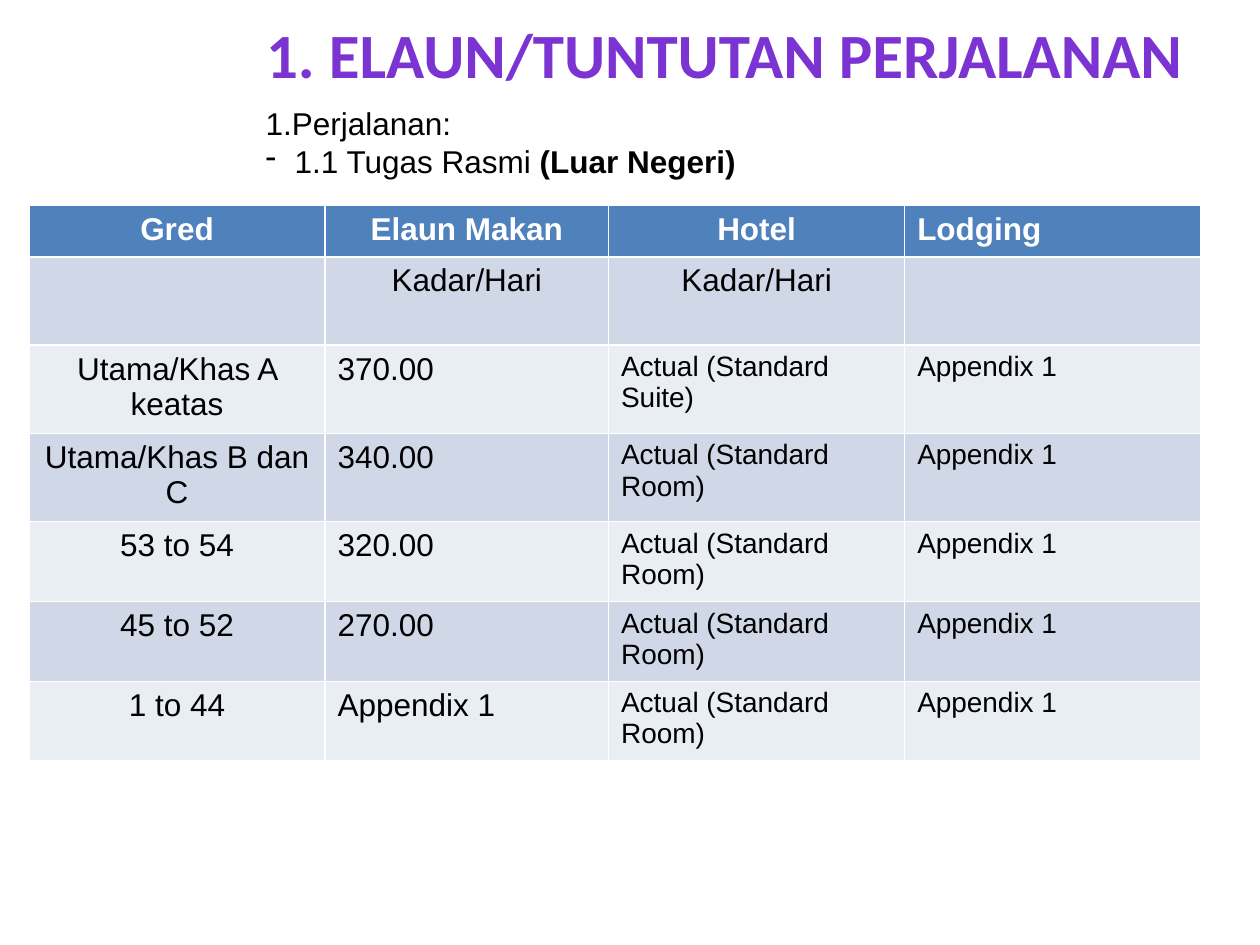
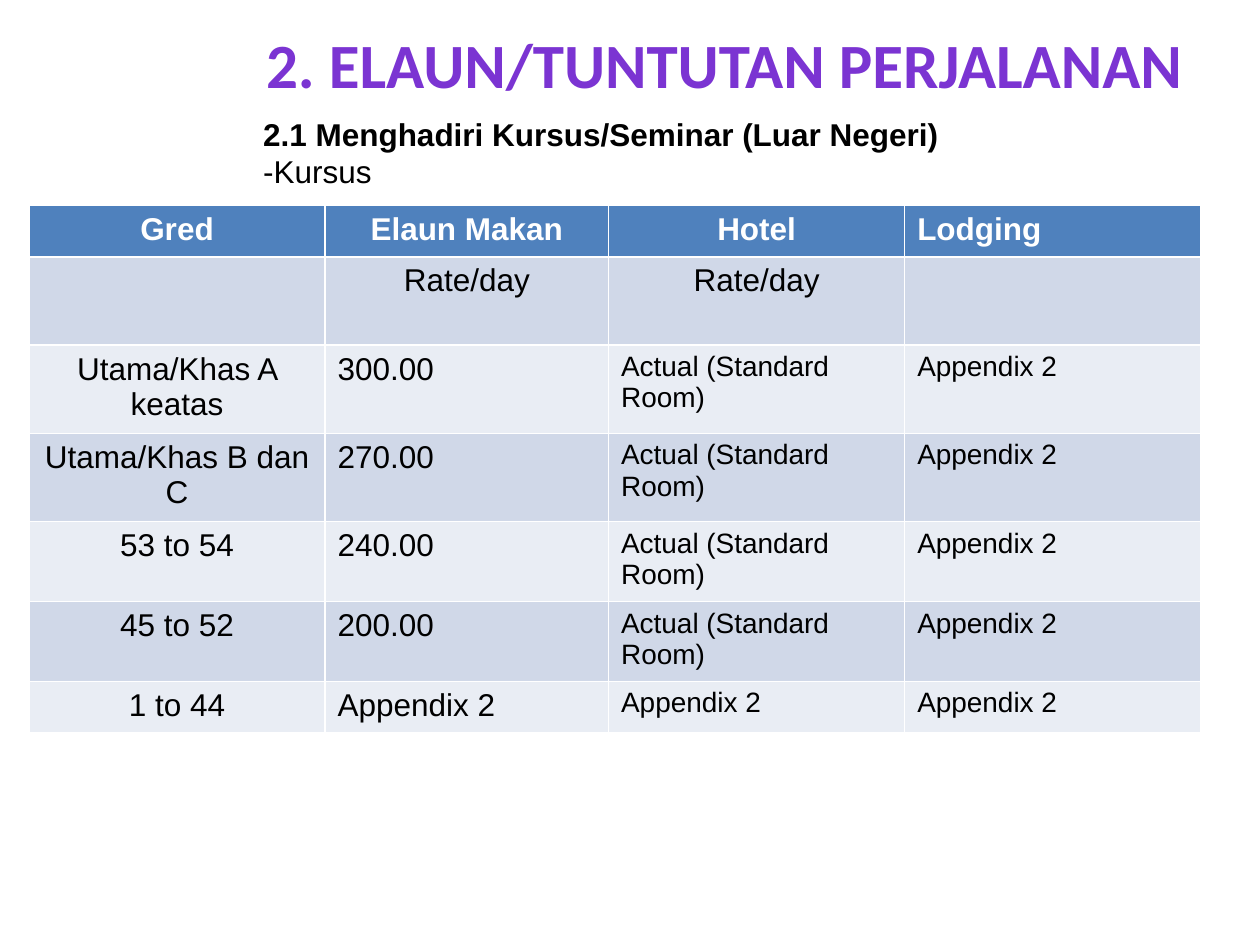
from lxml.etree import SubElement
from pptx import Presentation
from pptx.dml.color import RGBColor
from pptx.enum.text import MSO_ANCHOR, MSO_AUTO_SIZE, PP_ALIGN
from pptx.oxml.ns import qn
from pptx.util import Inches, Pt

PURPLE = RGBColor(0x7B, 0x34, 0xD2)
BLACK = RGBColor(0x00, 0x00, 0x00)
WHITE = RGBColor(0xFF, 0xFF, 0xFF)
HEADER_BLUE = RGBColor(0x4F, 0x81, 0xBD)
BANDS = [RGBColor(0xE9, 0xED, 0xF4), RGBColor(0xD0, 0xD8, 0xE8)]

TITLE_FONT, BODY_FONT = "Calibri", "Arial"
BULLET_INDENT = Inches(0.23)

# Table layout, the same on both slides
TABLE_LEFT, TABLE_TOP = 0.23, 1.63
COLUMN_WIDTHS = [2.35, 2.25, 2.35, 2.35]
ROW_HEIGHTS = [0.41, 0.7, 0.7] + [0.41] * 4
HEADERS = ["Gred", "Elaun Makan", "Hotel", "Lodging"]
GRADES = ["Utama/Khas A keatas", "Utama/Khas B dan C", "53 to 54", "45 to 52", "1 to 44"]
SUITE, ROOM = "Actual (Standard Suite)", "Actual (Standard Room)"

# Each heading line is (bulleted, [(text, bold), ...])
SLIDES = [
    {
        "title": "1. ELAUN/TUNTUTAN PERJALANAN",
        "title_box": (1.97, 0.07, 7.56, 0.71),
        "heading": [
            (False, [("1.Perjalanan:", False)]),
            (True, [("1.1 Tugas Rasmi ", False), ("(Luar Negeri)", True)]),
        ],
        "heading_box": (2.01, 0.78, 6.48, 0.71),
        "unit": "Kadar/Hari",
        "meals": ["370.00", "340.00", "320.00", "270.00", "Appendix 1"],
        "hotels": [SUITE] + [ROOM] * 4,
        "lodging": "Appendix 1",
    },
    {
        "title": "2. ELAUN/TUNTUTAN PERJALANAN",
        "title_box": (1.97, 0.15, 7.56, 0.71),
        "heading": [
            (False, [("2.1 Menghadiri Kursus/Seminar (Luar Negeri)", True)]),
            (False, [("-Kursus", False)]),
        ],
        "heading_box": (1.99, 0.86, 7.36, 0.71),
        "unit": "Rate/day",
        "meals": ["300.00", "270.00", "240.00", "200.00", "Appendix 2"],
        "hotels": [ROOM] * 4 + ["Appendix 2"],
        "lodging": "Appendix 2",
    },
]


def set_font(font, name, size, color):
    font.name, font.size = name, Pt(size)
    font.color.rgb = color


def add_text_frame(slide, box):
    text_frame = slide.shapes.add_textbox(*map(Inches, box)).text_frame
    text_frame.word_wrap = True
    text_frame.auto_size = MSO_AUTO_SIZE.SHAPE_TO_FIT_TEXT
    return text_frame


def add_dash_bullet(paragraph):
    properties = paragraph._p.get_or_add_pPr()
    properties.set("marL", str(BULLET_INDENT))
    properties.set("indent", str(-BULLET_INDENT))
    SubElement(properties, qn("a:buChar"), char="-")


def add_title(slide, box, title):
    text_frame = add_text_frame(slide, box)
    text_frame.word_wrap = False
    text_frame.vertical_anchor = MSO_ANCHOR.MIDDLE
    paragraph = text_frame.paragraphs[0]
    paragraph.text = title
    paragraph.alignment = PP_ALIGN.CENTER
    set_font(paragraph.font, TITLE_FONT, 36, PURPLE)
    paragraph.font.bold = True


def add_heading(slide, box, lines):
    text_frame = add_text_frame(slide, box)
    for index, (bulleted, parts) in enumerate(lines):
        paragraph = text_frame.add_paragraph() if index else text_frame.paragraphs[0]
        if bulleted:
            add_dash_bullet(paragraph)
        set_font(paragraph.font, BODY_FONT, 18, BLACK)
        for text, bold in parts:
            run = paragraph.add_run()
            run.text = text
            run.font.bold = bold


def fill_cell(cell, text, row, column):
    is_header = row == 0
    cell.fill.solid()
    cell.fill.fore_color.rgb = HEADER_BLUE if is_header else BANDS[row % 2]
    paragraph = cell.text_frame.paragraphs[0]
    paragraph.text = text
    # Grades are centred, as are the two top rows except for the lodging column
    if column == 0 or (row < 2 and column < 3):
        paragraph.alignment = PP_ALIGN.CENTER
    size = 16 if row > 1 and column > 1 else 18
    set_font(paragraph.font, BODY_FONT, size, WHITE if is_header else BLACK)
    paragraph.font.bold = is_header


def add_rate_table(slide, left, top, rows):
    table = slide.shapes.add_table(
        len(rows), len(COLUMN_WIDTHS), Inches(left), Inches(top),
        Inches(sum(COLUMN_WIDTHS)), Inches(sum(ROW_HEIGHTS)),
    ).table
    for column, width in zip(table.columns, COLUMN_WIDTHS):
        column.width = Inches(width)
    for table_row, height in zip(table.rows, ROW_HEIGHTS):
        table_row.height = Inches(height)
    for row, texts in enumerate(rows):
        for column, text in enumerate(texts):
            fill_cell(table.cell(row, column), text, row, column)


def add_allowance_slide(presentation, content):
    slide = presentation.slides.add_slide(presentation.slide_layouts[6])
    add_title(slide, content["title_box"], content["title"])
    add_heading(slide, content["heading_box"], content["heading"])
    rows = [HEADERS, ["", content["unit"], content["unit"], ""]]
    for grade, meal, hotel in zip(GRADES, content["meals"], content["hotels"]):
        rows.append([grade, meal, hotel, content["lodging"]])
    add_rate_table(slide, TABLE_LEFT, TABLE_TOP, rows)


def main():
    presentation = Presentation()
    presentation.slide_width = Inches(10)
    presentation.slide_height = Inches(7.5)
    for content in SLIDES:
        add_allowance_slide(presentation, content)
    presentation.save("out.pptx")


if __name__ == "__main__":
    main()
